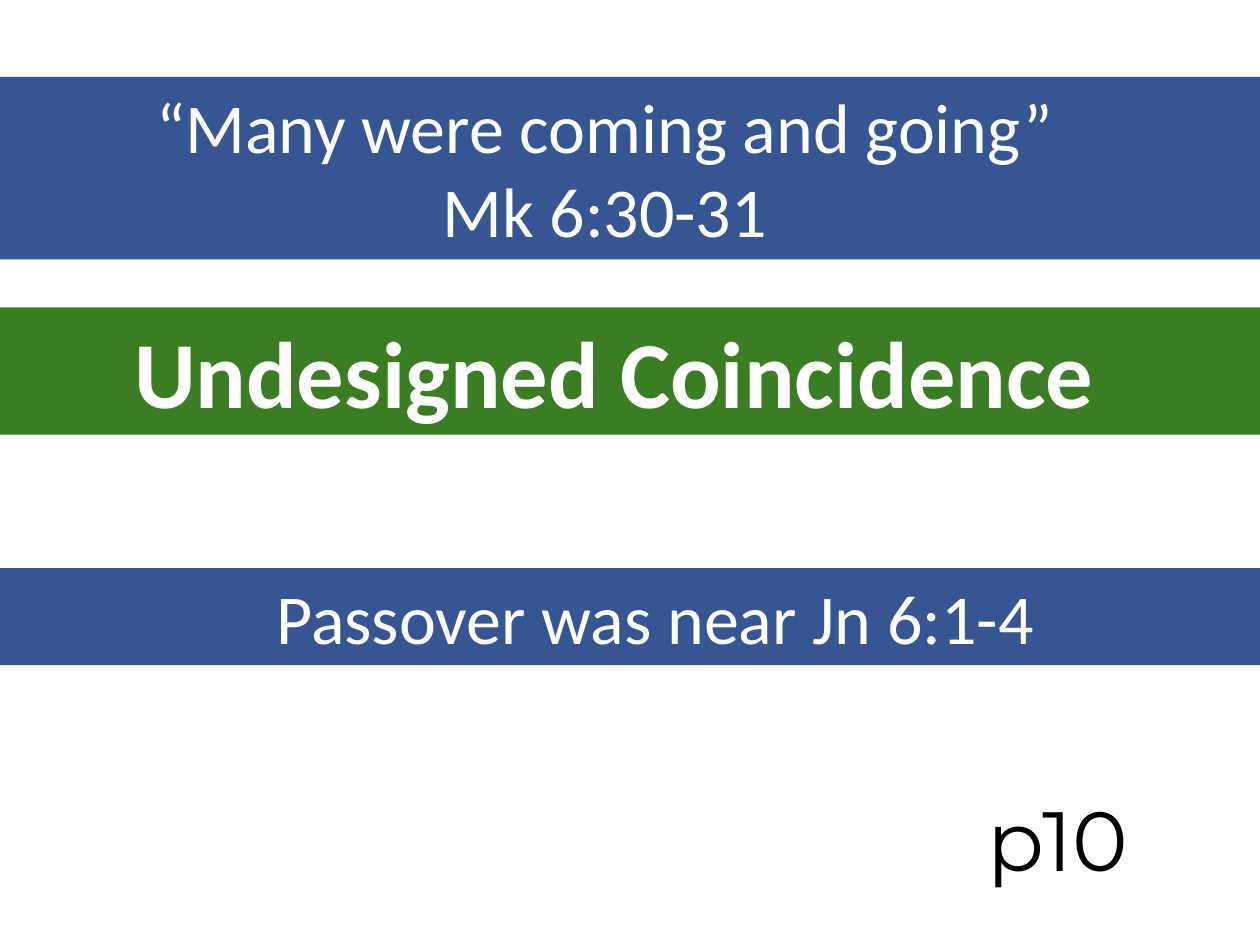
from pptx import Presentation
from pptx.dml.color import RGBColor
from pptx.enum.shapes import MSO_SHAPE
from pptx.enum.text import MSO_ANCHOR, MSO_AUTO_SIZE, PP_ALIGN
from pptx.util import Inches, Pt

COLORS = {"blue": "365693", "green": "3B7D23", "white": "FFFFFF", "black": "000000"}
WIDE, HIGH = 10, 7.5


def color(name):
    return RGBColor.from_string(COLORS[name])


def place(shape, left, top, width, height):
    shape.left, shape.top = Inches(left), Inches(top)
    shape.width, shape.height = Inches(width), Inches(height)


def write(shape, lines, size, ink, font="Calibri", bold=False,
          align=PP_ALIGN.CENTER, pads=(0.1, 0.1)):
    """Fill the shape with one paragraph per line; pads are left and right."""
    frame = shape.text_frame
    frame.word_wrap = True
    frame.auto_size = MSO_AUTO_SIZE.NONE
    frame.vertical_anchor = MSO_ANCHOR.TOP
    frame.margin_left, frame.margin_right = map(Inches, pads)
    frame.margin_top = frame.margin_bottom = Inches(0.05)
    frame.text = "\n".join(lines)
    for par in frame.paragraphs:
        par.alignment = align
        par.font.name, par.font.size = font, Pt(size)
        par.font.bold = bold
        par.font.color.rgb = color(ink)


def paint(shape, fill):
    shape.fill.solid()
    shape.fill.fore_color.rgb = color(fill)
    shape.line.fill.background()


def add_verse(slide, top, height, lines, pads):
    """Full-width blue band with a verse."""
    band = slide.shapes.add_shape(
        MSO_SHAPE.RECTANGLE, 0, Inches(top), Inches(WIDE), Inches(height))
    band.shadow.inherit = False
    paint(band, "blue")
    write(band, lines, 40, "white", pads=pads)


def set_title(slide, text):
    """Green title band, starting just off the left edge."""
    title = slide.shapes.title
    place(title, -0.15, 2.44, WIDE + 0.15, 1.01)
    paint(title, "green")
    write(title, [text], 54, "white", bold=True, pads=(0, 0.1))


def add_page(slide, text):
    box = slide.shapes.add_textbox(0, 0, 0, 0)
    place(box, 7.74, 6.2, 1.63, 0.91)
    write(box, [text], 48, "black", font="Montserrat", align=PP_ALIGN.LEFT)


def main():
    deck = Presentation()
    deck.slide_width, deck.slide_height = Inches(WIDE), Inches(HIGH)
    slide = deck.slides.add_slide(deck.slide_layouts[5])

    # Verses above and below the title
    add_verse(slide, 0.61, 1.45,
              ["“Many were coming and going”", "Mk 6:30-31"], (0.1, 0.5))
    set_title(slide, "Undesigned Coincidence")
    add_verse(slide, 4.51, 0.77, ["Passover was near Jn 6:1-4"], (0.5, 0.1))

    # Handout page
    add_page(slide, "p10")
    deck.save("out.pptx")


if __name__ == "__main__":
    main()
